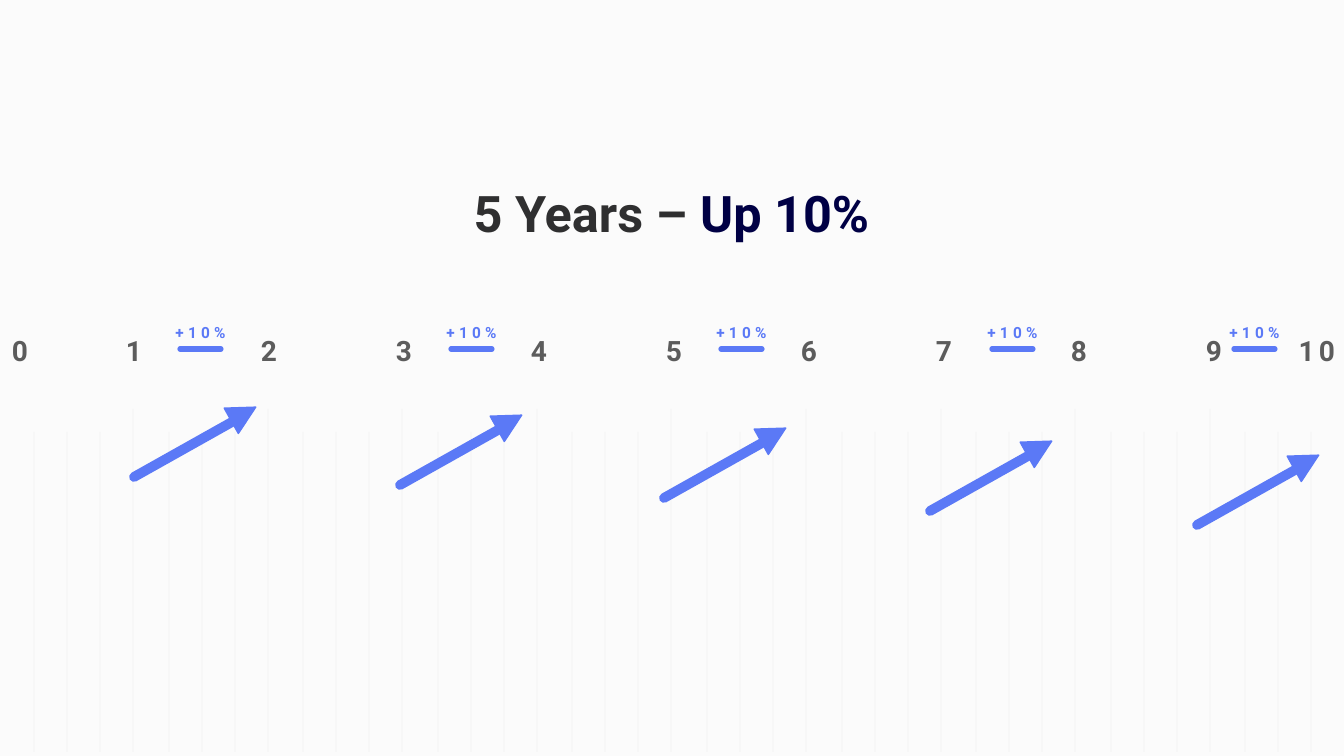
from pptx import Presentation
from pptx.dml.color import RGBColor
from pptx.enum.shapes import MSO_CONNECTOR as Connector, MSO_SHAPE as Shape
from pptx.enum.text import MSO_ANCHOR as Anchor, PP_ALIGN as Align
from pptx.oxml.ns import qn
from pptx.util import Pt
from lxml.etree import SubElement

# Content
HEADLINE = [("5 Years – ", "2F2F30"), ("Up 10%", "000044")]
YEARS = range(1, 10)
FIRST_YEAR, LAST_YEAR = "0", "10"
GROWTH = "+10%"
GROWTH_LEFTS = [180, 451, 721, 992, 1234]
ARROW_STARTS = [(134, 477), (400, 485), (664, 498), (930, 511), (1197, 525)]

# Style and measures in px
FONT = "Roboto"
BACKGROUND, GRID, GREY, BLUE = "FBFBFB", "2F2F30", "5C5C5C", "5B79F6"
WIDTH, HEIGHT = 1344, 756
GRID_LEFT, GRID_STEP, GRID_MINOR_STEP = 133, 134.6, 33
MAJOR_TOP, MINOR_TOP, GRID_BOTTOM = 409, 432, 752
YEAR_LEFT, YEAR_STEP, YEAR_TOP, YEAR_HEIGHT = 120, 135, 305, 95


def px(length):
    return round(length * 914400 / 100.8)


def color(hex_string):
    return RGBColor.from_string(hex_string)


def add_run(paragraph, text, size, hex_string):
    run = paragraph.add_run()
    run.text = text
    font = run.font
    font.name, font.size, font.bold = FONT, Pt(size), True
    font.color.rgb = color(hex_string)
    return run


def add_label(shapes, text, box, size, hex_string, align=Align.CENTER, inset=0):
    frame = shapes.add_textbox(*map(px, box)).text_frame
    frame.word_wrap = True
    frame.vertical_anchor = Anchor.MIDDLE
    frame.margin_left = frame.margin_right = px(inset)
    paragraph = frame.paragraphs[0]
    paragraph.alignment, paragraph.line_spacing = align, 0.9
    run = add_run(paragraph, text, size, hex_string)
    run.font._element.set("spc", "300")


def add_line(shapes, start, end, hex_string, width, opacity=None):
    connector = shapes.add_connector(Connector.STRAIGHT, *map(px, start + end))
    connector.line.width = Pt(width)
    connector.line.color.rgb = color(hex_string)
    properties = connector._element.spPr
    SubElement(properties, qn("a:effectLst"))
    if opacity is None:
        properties.find(qn("a:ln")).set("cap", "rnd")
    else:
        tint = next(properties.iter(qn("a:srgbClr")))
        SubElement(tint, qn("a:alpha")).set("val", str(opacity * 1000))


def add_grid(shapes):
    for i in range(len(YEARS) + 1):
        major = round(GRID_LEFT + GRID_STEP * i)
        for back in range(4):
            x = major - back * GRID_MINOR_STEP
            if x < WIDTH:
                top = MINOR_TOP if back else MAJOR_TOP
                add_line(shapes, (x, top), (x, GRID_BOTTOM), GRID, 0.5, opacity=6)


def add_arrow(shapes, x, y):
    add_line(shapes, (x, y), (x + 98, y - 55), BLUE, 7)
    head = shapes.add_shape(Shape.ISOSCELES_TRIANGLE,
                            *map(px, (x + 95, y - 77, 29, 28)))
    head.rotation = 60.8
    head.shadow.inherit = False
    head.fill.solid()
    head.fill.fore_color.rgb = color(BLUE)
    head.line.color.rgb = color(BLUE)
    head.line.width = Pt(1)


def main():
    deck = Presentation()
    deck.slide_width, deck.slide_height = px(WIDTH), px(HEIGHT)
    slide = deck.slides.add_slide(deck.slide_layouts[5])
    slide.background.fill.solid()
    slide.background.fill.fore_color.rgb = color(BACKGROUND)
    shapes = slide.shapes

    # Headline
    title = shapes.title
    title.left, title.top, title.width, title.height = map(px, (438, 177, 467, 72))
    title.text_frame.vertical_anchor = Anchor.TOP
    headline = title.text_frame.paragraphs[0]
    headline.alignment = Align.CENTER
    for text, hex_string in HEADLINE:
        add_run(headline, text, 36, hex_string)

    # Timeline grid
    add_grid(shapes.add_group_shape().shapes)

    # Year numbers
    for i, year in enumerate(YEARS):
        box = (YEAR_LEFT + YEAR_STEP * i, YEAR_TOP, 28, YEAR_HEIGHT)
        add_label(shapes, str(year), box, 20, GREY)
    for year, left, align in [(FIRST_YEAR, 2, Align.LEFT),
                              (LAST_YEAR, 1264, Align.RIGHT)]:
        add_label(shapes, year, (left, YEAR_TOP, 81, YEAR_HEIGHT), 20, GREY,
                  align, inset=10)

    # Growth labels with their bars
    for left in GROWTH_LEFTS:
        badge = shapes.add_group_shape().shapes
        add_line(badge, (left, 349), (left + 41, 349), BLUE, 3.75)
        add_label(badge, GROWTH, (left - 20, 320, 81, 27), 11, BLUE)

    # Rising arrows
    for x, y in ARROW_STARTS:
        add_arrow(shapes.add_group_shape().shapes, x, y)

    deck.save("out.pptx")


if __name__ == "__main__":
    main()
